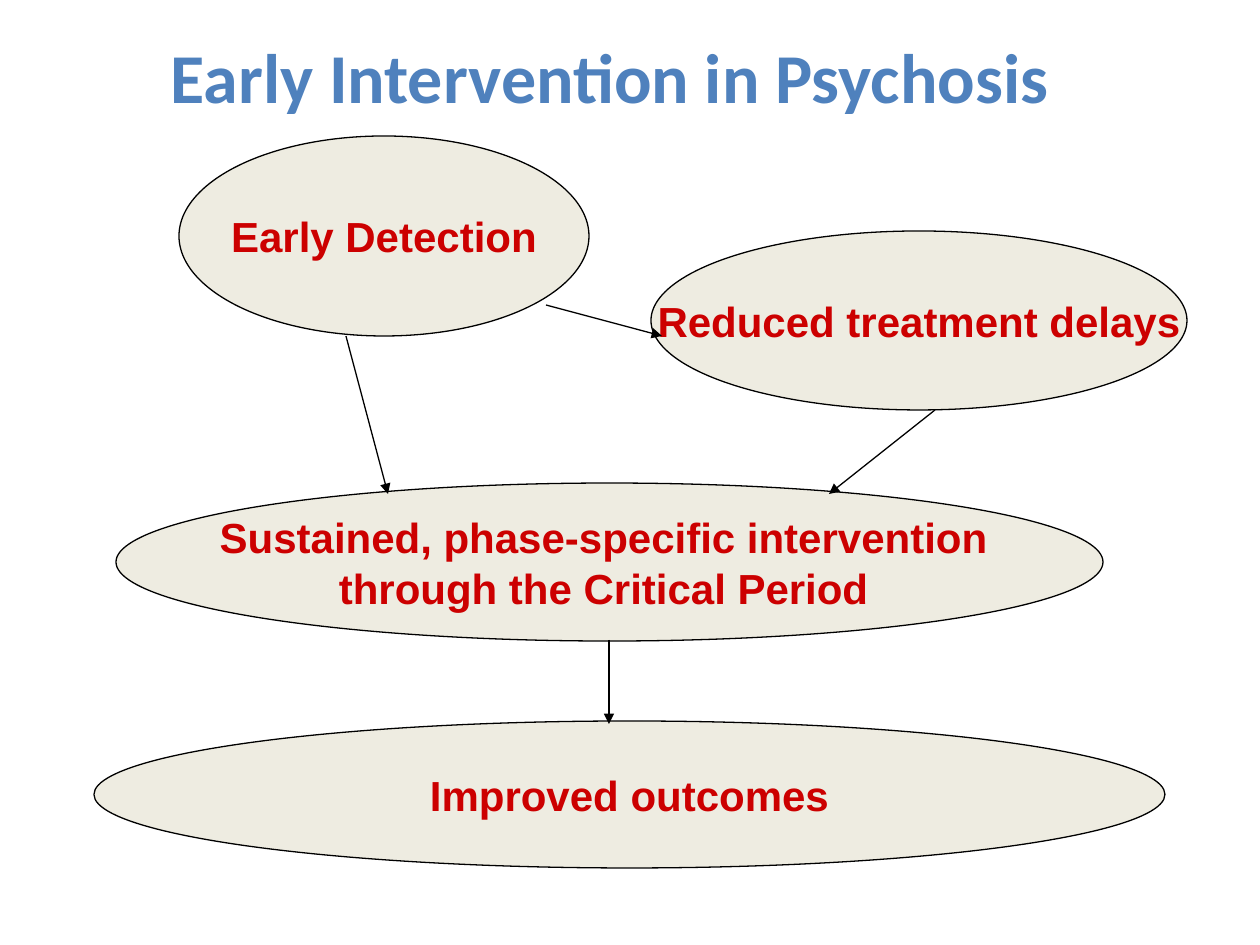
from dataclasses import dataclass

from lxml.etree import SubElement
from pptx import Presentation
from pptx.dml.color import RGBColor
from pptx.enum.shapes import MSO_CONNECTOR, MSO_SHAPE
from pptx.enum.text import MSO_ANCHOR, PP_ALIGN
from pptx.oxml.ns import qn
from pptx.slide import Slide
from pptx.text.text import TextFrame
from pptx.util import Emu, Pt

PX_PER_INCH = 126
BLUE = RGBColor(0x4F, 0x81, 0xBD)
CREAM = RGBColor(0xEE, 0xEC, 0xE1)
RED = RGBColor(0xCC, 0x00, 0x00)
BLACK = RGBColor(0x00, 0x00, 0x00)
OUTLINE = Pt(0.75)


@dataclass(frozen=True)
class Stage:
    left: int
    top: int
    width: int
    height: int
    lines: tuple[str, ...]


@dataclass(frozen=True)
class Arrow:
    start: tuple[int, int]
    end: tuple[int, int]


STAGES = (
    Stage(179, 136, 410, 200, ("Early Detection",)),
    Stage(651, 231, 536, 179, ("Reduced treatment delays",)),
    # The closing spaces shift the centred lines slightly to the left.
    Stage(116, 483, 987, 158, ("Sustained, phase-specific intervention ",
                               "through the Critical Period ")),
    Stage(94, 721, 1071, 147, ("Improved outcomes",)),
)
ARROWS = (
    Arrow((346, 336), (388, 494)),
    Arrow((935, 410), (829, 494)),
    Arrow((609, 640), (609, 724)),
    Arrow((546, 305), (662, 336)),
)


def px(length: int) -> Emu:
    return Emu(round(length * 914400 / PX_PER_INCH))


def write_lines(frame: TextFrame, lines: tuple[str, ...], font_name: str,
                size: int, color: RGBColor) -> None:
    """Write each line as a centred, bold paragraph."""
    for index, line in enumerate(lines):
        paragraph = frame.add_paragraph() if index else frame.paragraphs[0]
        paragraph.alignment = PP_ALIGN.CENTER
        run = paragraph.add_run()
        run.text = line
        run.font.name = font_name
        run.font.size = Pt(size)
        run.font.bold = True
        run.font.color.rgb = color


def write_title(slide: Slide, text: str) -> None:
    title = slide.shapes.title
    title.left, title.top = px(74), px(-34)
    title.width, title.height = px(1071), px(158)
    title.text_frame.vertical_anchor = MSO_ANCHOR.BOTTOM
    write_lines(title.text_frame, (text,), "Calibri", 40, BLUE)


def draw_stage(slide: Slide, stage: Stage) -> None:
    ellipse = slide.shapes.add_shape(
        MSO_SHAPE.OVAL, px(stage.left), px(stage.top),
        px(stage.width), px(stage.height))
    ellipse.shadow.inherit = False
    ellipse.fill.solid()
    ellipse.fill.fore_color.rgb = CREAM
    ellipse.line.color.rgb = BLACK
    ellipse.line.width = OUTLINE
    frame = ellipse.text_frame
    frame.word_wrap = False
    frame.vertical_anchor = MSO_ANCHOR.MIDDLE
    write_lines(frame, stage.lines, "Arial", 24, RED)


def draw_arrow(slide: Slide, arrow: Arrow) -> None:
    connector = slide.shapes.add_connector(
        MSO_CONNECTOR.STRAIGHT, *map(px, arrow.start + arrow.end))
    connector.line.color.rgb = BLACK
    connector.line.width = OUTLINE
    SubElement(connector.line._get_or_add_ln(), qn("a:tailEnd"), type="triangle")
    SubElement(connector._element.spPr, qn("a:effectLst"))


def main() -> None:
    presentation = Presentation()
    presentation.slide_width, presentation.slide_height = px(1260), px(945)
    slide = presentation.slides.add_slide(
        presentation.slide_layouts.get_by_name("Title Only"))
    write_title(slide, "Early Intervention in Psychosis")
    for stage in STAGES:
        draw_stage(slide, stage)
    for arrow in ARROWS:
        draw_arrow(slide, arrow)
    presentation.save("out.pptx")


if __name__ == "__main__":
    main()
